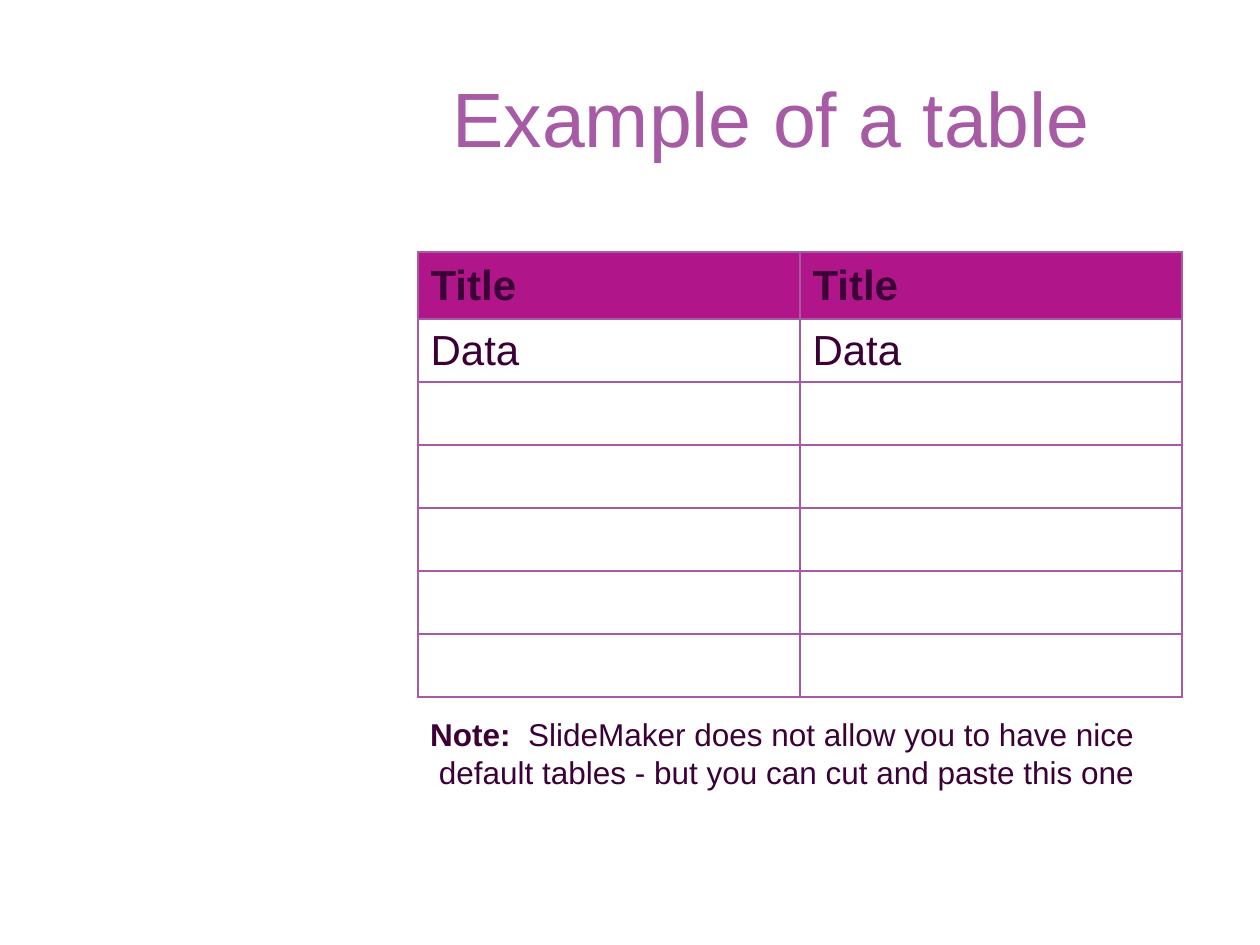
from dataclasses import dataclass

from lxml import etree
from pptx import Presentation
from pptx import util as u
from pptx.dml.color import RGBColor
from pptx.enum import shapes, text
from pptx.oxml import ns

PX = 914400 / 126


@dataclass(frozen=True)
class Theme:
    font: str = "Arial"
    accent: str = "A65BA4"
    header: str = "B01689"
    ink: str = "3B0136"
    paper: str = "FFFFFF"
    title_size: int = 44
    table_size: int = 24
    note_size: int = 18
    border_pt: int = 1


def px(n):
    return u.Emu(round(n * PX))


def sub(parent, tag, **attrs):
    return etree.SubElement(parent, ns.qn(tag), attrs)


class SlideBuilder:
    def __init__(self, prs, theme):
        self.theme = theme
        self.s = prs.slides.add_slide(prs.slide_layouts[6])

    def run(self, p, content, size, color, bold=False):
        r = p.add_run()
        r.text = content
        fmt = {"name": self.theme.font, "size": u.Pt(size), "bold": bold}
        for key, value in fmt.items():
            setattr(r.font, key, value)
        r.font.color.rgb = RGBColor.from_string(color)

    def frame(self, tf, anchor):
        """Set wrapping and anchor; return the centred first paragraph."""
        for key, value in {"word_wrap": True, "vertical_anchor": anchor}.items():
            setattr(tf, key, value)
        p = tf.paragraphs[0]
        p.alignment = text.PP_ALIGN.CENTER
        return p

    def title(self, box, content):
        sp = self.s.shapes.add_textbox(*map(px, box))
        p = self.frame(sp.text_frame, text.MSO_ANCHOR.MIDDLE)
        self.run(p, content, self.theme.title_size, self.theme.accent)

    def note(self, box, label, lines, opacity):
        t = self.theme
        sp = self.s.shapes.add_shape(shapes.MSO_SHAPE.RECTANGLE, *map(px, box))
        sp.shadow.inherit = False
        sp.line.fill.background()
        sp.fill.solid()
        sp.fill.fore_color.rgb = RGBColor.from_string(t.paper)
        color = sp.fill._xPr.find(".//" + ns.qn("a:srgbClr"))
        sub(color, "a:alpha", val=str(opacity * 1000))
        p = self.frame(sp.text_frame, text.MSO_ANCHOR.TOP)
        self.run(p, label, t.note_size, t.ink, bold=True)
        for i, line in enumerate(lines):
            if i:
                p.add_line_break()
            self.run(p, line, t.note_size, t.ink)

    def borders(self, cell):
        """Draw all four borders, which must precede the cell fill."""
        pr = cell._tc.get_or_add_tcPr()
        for side in "LRTB":
            ln = sub(pr, "a:ln" + side, w=str(u.Pt(self.theme.border_pt)))
            sub(sub(ln, "a:solidFill"), "a:srgbClr", val=self.theme.accent)

    def table(self, left, top, col_width, heights, rows):
        """Build a table whose first row is the header."""
        t = self.theme
        cols = len(rows[0])
        tbl = self.s.shapes.add_table(
            len(rows), cols, px(left), px(top),
            px(col_width * cols), px(sum(heights))).table
        tbl.horz_banding = False
        for col in tbl.columns:
            col.width = px(col_width)
        for i, (height, values) in enumerate(zip(heights, rows)):
            tbl.rows[i].height = px(height)
            for j, value in enumerate(values):
                cell = tbl.cell(i, j)
                cell.vertical_anchor = text.MSO_ANCHOR.MIDDLE
                self.borders(cell)
                if i == 0:
                    cell.fill.solid()
                    cell.fill.fore_color.rgb = RGBColor.from_string(t.header)
                else:
                    cell.fill.background()
                if value:
                    self.run(cell.text_frame.paragraphs[0], value,
                             t.table_size, t.ink, bold=i == 0)


def main():
    prs = Presentation()
    prs.slide_width, prs.slide_height = px(1260), px(945)
    slide = SlideBuilder(prs, Theme())
    slide.title((346, 38, 851, 157), "Example of a table")
    rows = [["Title"] * 2, ["Data"] * 2] + [[""] * 2] * 5
    slide.table(418, 252, 382, [67] + [63] * 6, rows)
    slide.note((348, 709, 877, 88), "Note:  ",
               ["SlideMaker does not allow you to have nice ",
                "default tables - but you can cut and paste this one"],
               opacity=60)
    prs.save("out.pptx")


if __name__ == "__main__":
    main()
